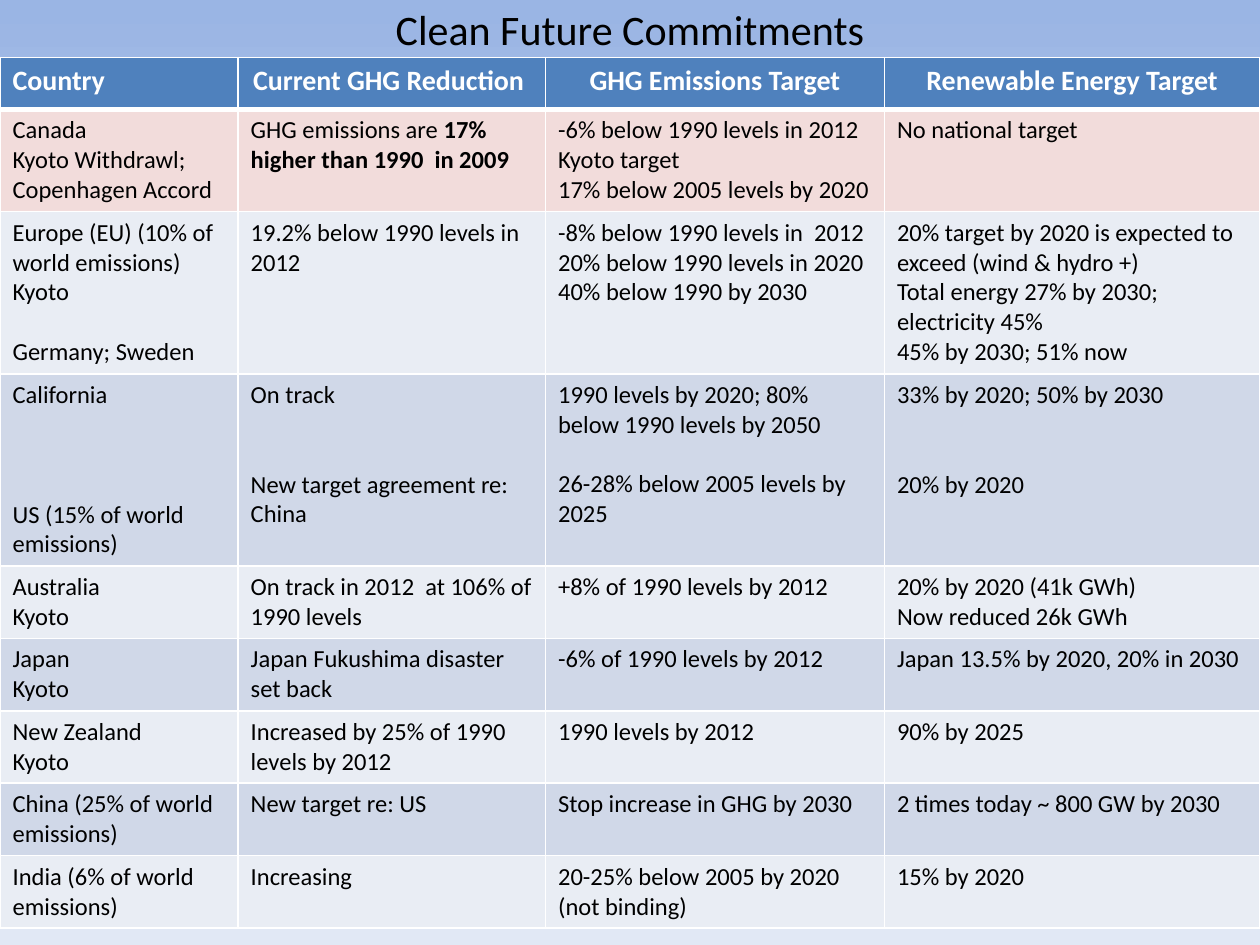
from copy import deepcopy

from lxml.etree import SubElement
from pptx import Presentation
from pptx.dml.color import RGBColor
from pptx.enum.text import MSO_ANCHOR, PP_ALIGN
from pptx.oxml.ns import qn
from pptx.util import Inches, Pt

HUES = {"head": "4F81BD", "alert": "F2DCDB", "light": "E9EDF4", "dark": "D0D8E8",
        "white": "FFFFFF", "black": "000000"}
SKY = [(0, "9AB5E4"), (0.5, "C2D1ED"), (1, "E1E8F5")]
TITLE = {"size": Pt(24), "bold": False, "hue": "black"}
HEAD = {"size": Pt(16), "bold": True, "hue": "white"}
BODY = {"size": Pt(14), "bold": False, "hue": "black"}
LINE = 17.1  # height of one body line in points
COLS = [0.189, 0.244, 0.269, 0.298]
HEADS = ["Country", "Current GHG Reduction ", "GHG Emissions Target",
         "Renewable Energy Target"]

# Each row: number of text lines, then cells.
# "|" parts paragraphs, each "^" skips one line, "*" toggles bold.
ROWS = [
    (3, "Canada|Kyoto Withdrawl; Copenhagen Accord",
     "GHG emissions are *17% higher than 1990  in 2009*",
     "-6% below 1990 levels in 2012 Kyoto target|17% below 2005 levels by 2020",
     "No national target"),
    (5, "Europe (EU) (10% of world emissions)|Kyoto|^Germany; Sweden",
     "19.2% below 1990 levels in 2012",
     "-8% below 1990 levels in  2012|20% below 1990 levels in 2020"
     "|40% below 1990 by 2030",
     "20% target by 2020 is expected to exceed (wind & hydro +)"
     "|Total energy 27% by 2030; electricity 45%|45% by 2030; 51% now"),
    (6, "California|^^^US (15% of world emissions)",
     "On track|^^New target agreement re: China",
     "1990 levels by 2020; 80% below 1990 levels by 2050"
     "|^26-28% below 2005 levels by 2025",
     "33% by 2020; 50% by 2030|^^20% by 2020"),
    (2, "Australia|Kyoto", "On track in 2012  at 106% of 1990 levels",
     "+8% of 1990 levels by 2012", "20% by 2020 (41k GWh)|Now reduced 26k GWh"),
    (2, "Japan|Kyoto", "Japan Fukushima disaster set back",
     "-6% of 1990 levels by 2012", "Japan 13.5% by 2020, 20% in 2030"),
    (2, "New Zealand|Kyoto", "Increased by 25% of 1990 levels by 2012",
     "1990 levels by 2012", "90% by 2025"),
    (2, "China (25% of world emissions)", "New target re: US",
     "Stop increase in GHG by 2030", "2 times today ~ 800 GW by 2030"),
    (2, "India (6% of world emissions)", "Increasing",
     "20-25% below 2005 by 2020 (not binding)", "15% by 2020"),
]


class Deck:
    """Holds the style and the current slide."""

    def __init__(self, wide, high):
        self.prs = Presentation()
        self.prs.slide_width = self.wide = Inches(wide)
        self.prs.slide_height = self.high = Inches(high)
        self.slide = self.prs.slides.add_slide(self.prs.slide_layouts[5])

    def sky(self, stops):
        fill = self.slide.background.fill
        fill.gradient()
        fill.gradient_angle = 270
        first = next(self.slide.element.iter(qn("a:gs")))
        first.addnext(deepcopy(first))
        for stop, (pos, hue) in zip(fill.gradient_stops, stops):
            stop.position = pos
            stop.color.rgb = RGBColor.from_string(hue)

    def label(self, frame, text, look, align=PP_ALIGN.LEFT):
        for i, part in enumerate(text.split("|")):
            para = frame.add_paragraph() if i else frame.paragraphs[0]
            para.alignment = align
            words = part.lstrip("^")
            gap = len(part) - len(words)
            if gap:
                para.space_before = Pt(gap * LINE)
            for j, piece in enumerate(words.split("*")):
                if piece:
                    run = para.add_run()
                    run.text = piece
                    self.style(run.font, {**look, "bold": look["bold"] or j % 2 == 1})

    def style(self, font, look):
        font.name = "Calibri"
        font.color.rgb = RGBColor.from_string(HUES[look["hue"]])
        for name in ("size", "bold"):
            setattr(font, name, look[name])

    def title(self, text, share):
        box = self.slide.shapes.title
        place = {"left": 0, "top": 0, "width": self.wide,
                 "height": int(self.high * share)}
        for name, value in place.items():
            setattr(box, name, value)
        box.text_frame.vertical_anchor = MSO_ANCHOR.MIDDLE
        self.label(box.text_frame, text, TITLE, PP_ALIGN.CENTER)

    def cell(self, cell, hue, base):
        """Give a cell white borders, then its fill."""
        props = cell._tc.get_or_add_tcPr()
        for side, width in zip("LRTB", (1, 1, 1, base)):
            line = SubElement(props, qn(f"a:ln{side}"), w=str(Pt(width)))
            paint = SubElement(line, qn("a:solidFill"))
            SubElement(paint, qn("a:srgbClr"), val=HUES["white"])
        cell.fill.solid()
        cell.fill.fore_color.rgb = RGBColor.from_string(HUES[hue])

    def table(self, top, cols, heads, rows):
        highs = [Inches(0.41)] + [Pt(row[0] * LINE + 7.2) for row in rows]
        grid = self.slide.shapes.add_table(
            len(highs), len(cols), 0, int(self.high * top), self.wide, sum(highs)).table
        grid.horz_banding = False
        for col, share in zip(grid.columns, cols):
            col.width = int(self.wide * share)
        for row, high in zip(grid.rows, highs):
            row.height = high
        for c, text in enumerate(heads):
            self.cell(grid.cell(0, c), "head", 3)
            align = PP_ALIGN.CENTER if c else PP_ALIGN.LEFT
            self.label(grid.cell(0, c).text_frame, text, HEAD, align)
        for r, (_, *texts) in enumerate(rows, 1):
            hue = "alert" if r == 1 else ("light", "dark")[r % 2]
            for c, text in enumerate(texts):
                self.cell(grid.cell(r, c), hue, 1)
                self.label(grid.cell(r, c).text_frame, text, BODY)


def main():
    deck = Deck(10, 7.5)
    deck.sky(SKY)
    deck.title("Clean Future Commitments", 0.06)
    deck.table(0.061, COLS, HEADS, ROWS)
    deck.prs.save("out.pptx")


if __name__ == "__main__":
    main()
